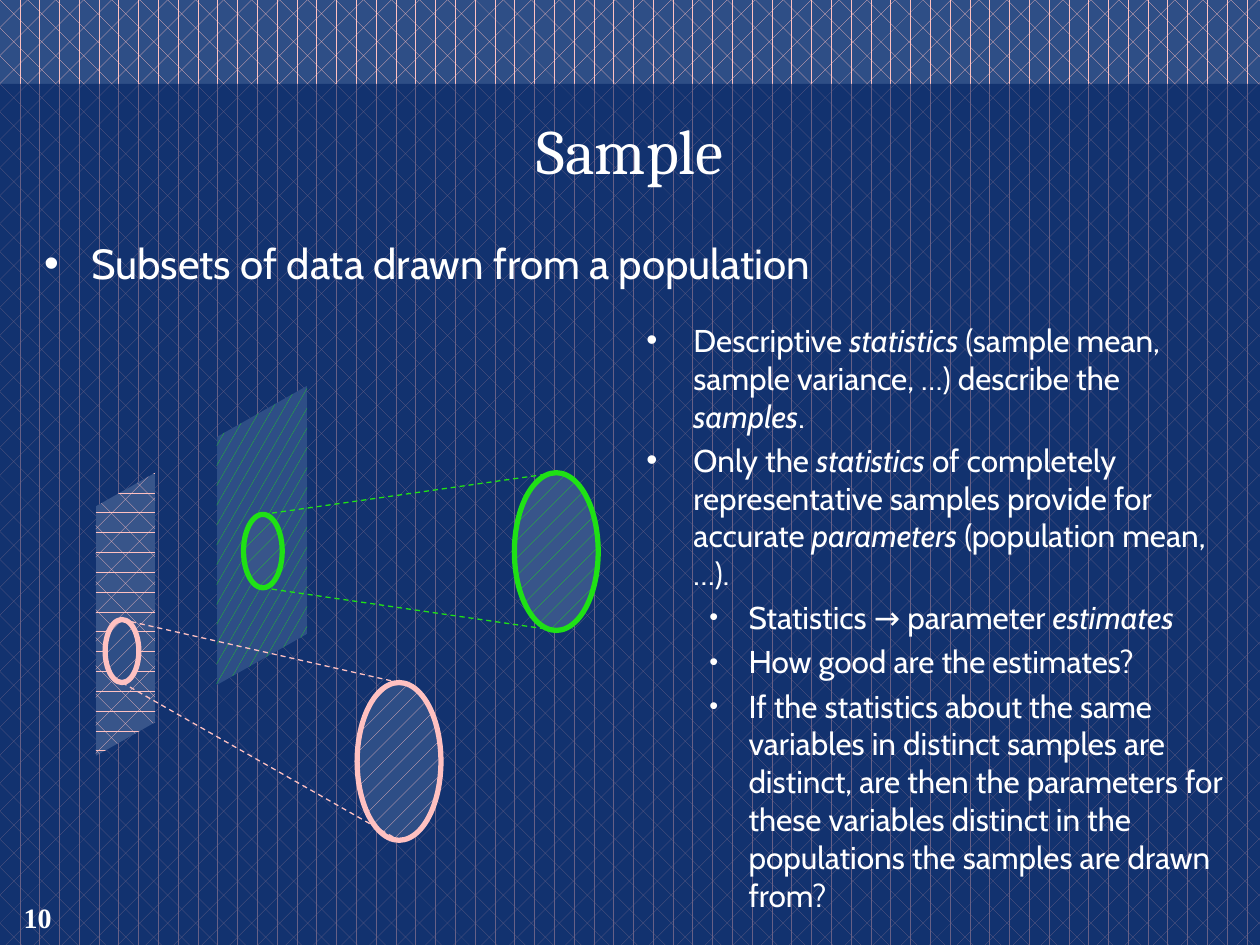
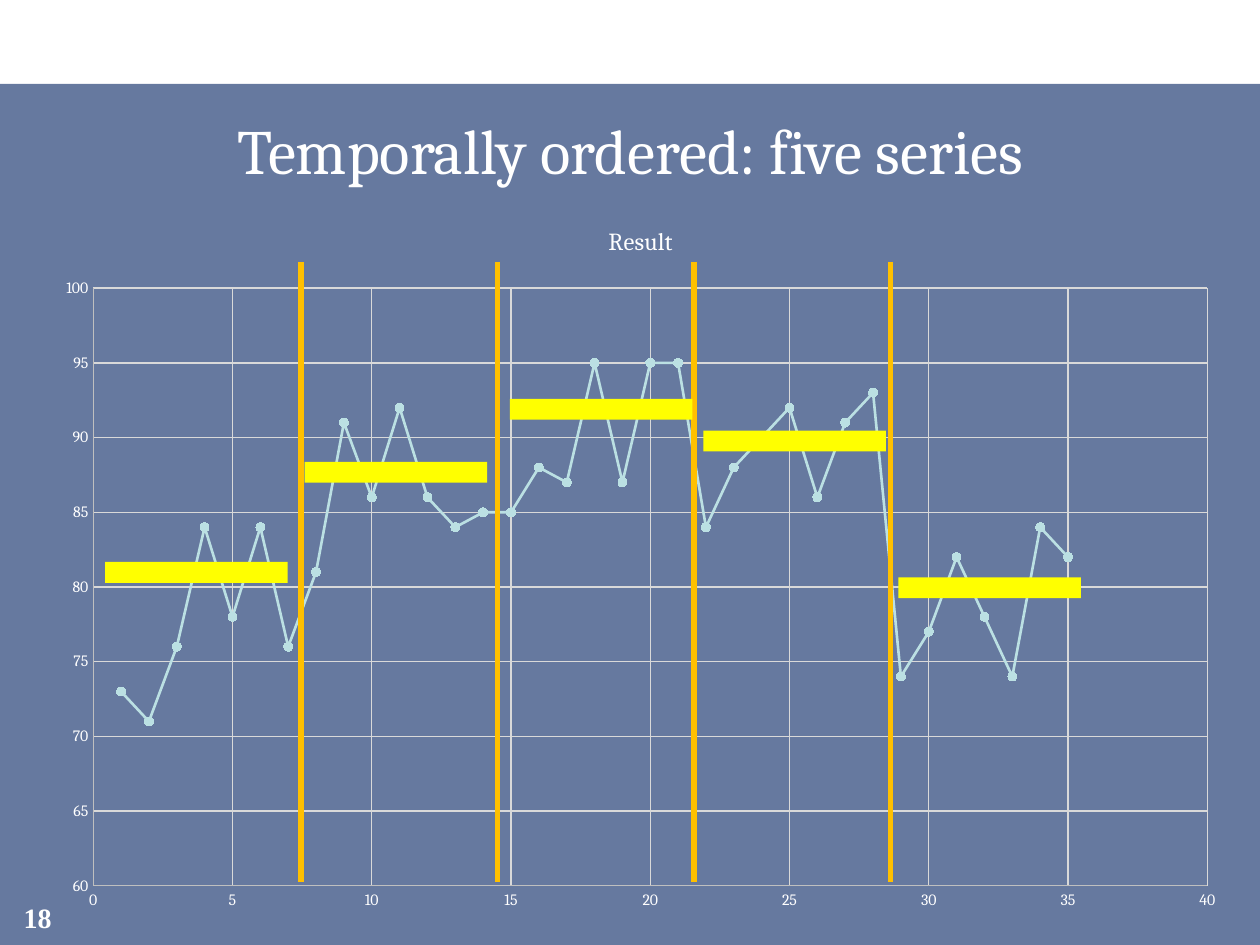
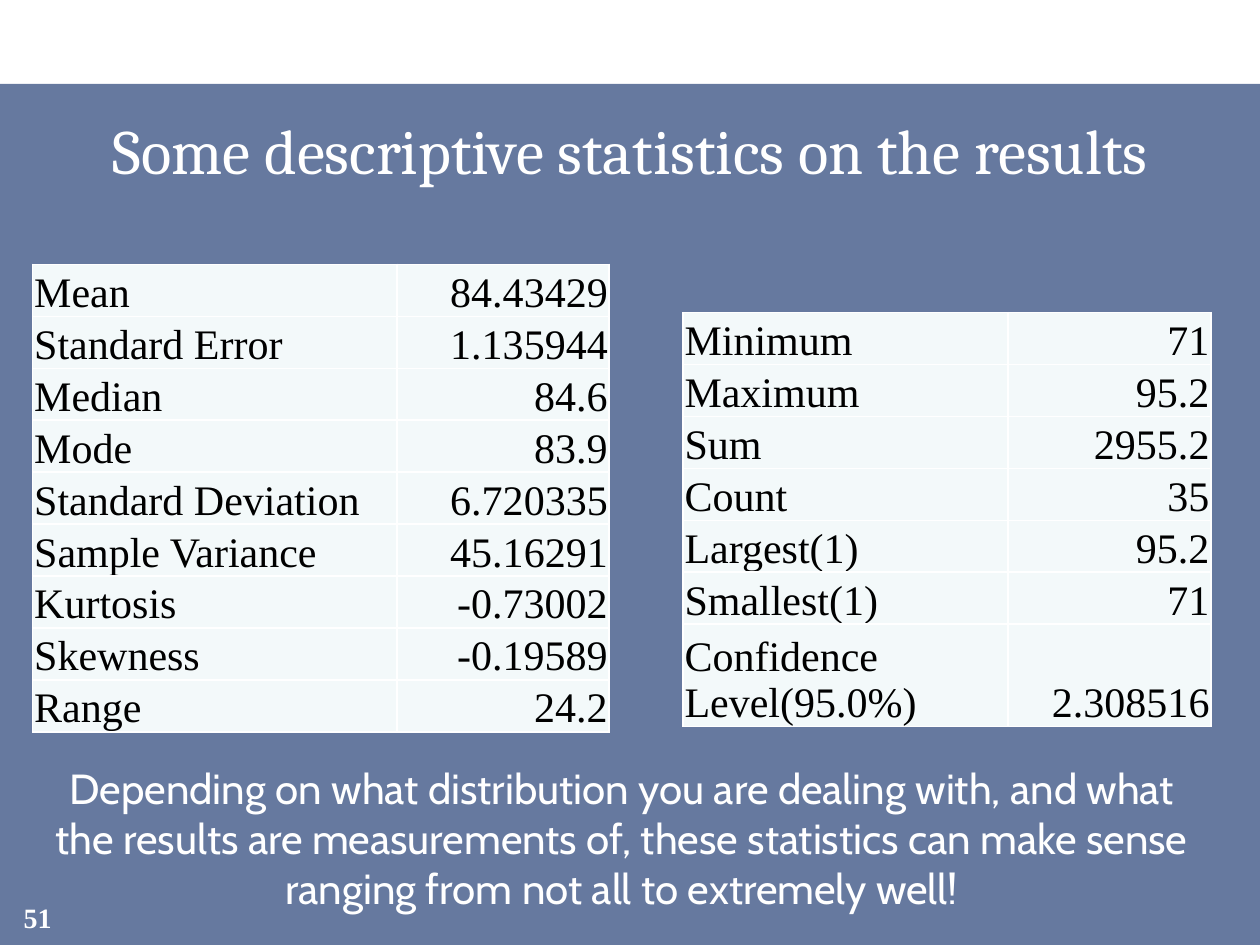
import dataclasses

import lxml.etree
import pptx
import pptx.chart.data
import pptx.dml.color
import pptx.enum.chart
import pptx.enum.dml
import pptx.enum.shapes
import pptx.enum.text
import pptx.oxml.ns
import pptx.util

Cm, Pt = pptx.util.Cm, pptx.util.Pt
RGB = pptx.dml.color.RGBColor.from_string
PATTERN = pptx.enum.dml.MSO_PATTERN
SHAPE = pptx.enum.shapes.MSO_SHAPE
ALIGN = pptx.enum.text.PP_ALIGN
ANCHOR = pptx.enum.text.MSO_ANCHOR
qn = pptx.oxml.ns.qn


@dataclasses.dataclass(frozen=True)
class Theme:
    white: str = "FFFFFF"
    black: str = "000000"
    navy: str = "002060"
    blue: str = "2E4E86"
    pale_blue: str = "38558A"
    pink: str = "FFC1C1"
    green: str = "1FE115"
    divider: str = "FFC000"
    mean_bar: str = "FFFF00"
    series: str = "BBE0E3"
    axis: str = "BFBFBF"
    grid: str = "D9D9D9"
    cell: str = "F3F9FA"
    panel_opacity: int = 60
    heading: str = "Cambria"
    body: str = "Cabin"
    figures: str = "Times New Roman"
    title_size: int = 36
    body_size: int = 24
    note_size: int = 18
    number_size: int = 16
    chart_title_size: int = 14
    axis_size: int = 9


def set_all(obj, values):
    for name, value in values.items():
        setattr(obj, name, value)


def add_xml(parent, tag, **attrs):
    return lxml.etree.SubElement(parent, qn(tag), attrs)


class Deck:
    """Holds the theme and the current slide."""

    def __init__(self, theme):
        self.t = theme
        self.prs = pptx.Presentation()
        set_all(self.prs, {"slide_width": Cm(25.4), "slide_height": Cm(19.05)})
        self.slide = None

    def font(self, font, name, size, color, **extra):
        set_all(font, {"name": name, "size": Pt(size), **extra})
        font.color.rgb = RGB(color)

    def pattern(self, fill, kind, fore, back):
        fill.patterned()
        fill.pattern = kind
        fill.fore_color.rgb, fill.back_color.rgb = RGB(fore), RGB(back)

    def new_slide(self, title, number):
        t = self.t
        self.slide = self.prs.slides.add_slide(self.prs.slide_layouts[5])
        # Translucent panel behind everything
        sp = self.shape(SHAPE.RECTANGLE, 0, 1.69, 25.4, 17.36, t.navy)
        color = sp.element.spPr.find(".//" + qn("a:srgbClr"))
        add_xml(color, "a:alpha", val=str(t.panel_opacity * 1000))
        self.slide.shapes.element.insert(2, sp.element)
        # Title and slide number
        sp = self.slide.shapes.title
        set_all(sp, {"left": Cm(0.64), "top": Cm(2.12),
                     "width": Cm(24.13), "height": Cm(2.12)})
        tf = sp.text_frame
        set_all(tf, {"vertical_anchor": ANCHOR.TOP, "word_wrap": True})
        self.paragraph(tf.paragraphs[0], title, t.title_size, t.heading, ALIGN.CENTER)
        self.text([(number, 0)], 0, 18.03, 1.52, 1.02, t.number_size,
                  t.figures, ALIGN.CENTER, bold=True)

    def paragraph(self, p, text, size, name, align=ALIGN.LEFT, color=None, bold=False):
        """Fill a paragraph; words between asterisks become italic."""
        p.alignment = align
        for i, part in enumerate(text.split("*")):
            if part:
                r = p.add_run()
                r.text = part
                self.font(r.font, name, size, color or self.t.white,
                          bold=bold, italic=i % 2 == 1)

    def bullet(self, p, level):
        margin, indent, percent = [(0.95, -0.95, 100), (2.06, -0.79, 80)][level]
        p.level = level
        pPr = p._p.get_or_add_pPr()
        pPr.set("marL", str(Cm(margin)))
        pPr.set("indent", str(Cm(indent)))
        add_xml(add_xml(pPr, "a:buClr"), "a:srgbClr", val=self.t.white)
        add_xml(pPr, "a:buSzPct", val=str(percent * 1000))
        add_xml(pPr, "a:buFont", typeface="Arial")
        add_xml(pPr, "a:buChar", char="•")

    def text(self, items, x, y, w, h, size, name=None, align=ALIGN.LEFT,
             bold=False, bullets=False):
        tf = self.slide.shapes.add_textbox(Cm(x), Cm(y), Cm(w), Cm(h)).text_frame
        tf.word_wrap = True
        for i, (words, level) in enumerate(items):
            p = tf.add_paragraph() if i else tf.paragraphs[0]
            if bullets:
                self.bullet(p, level)
            if i:
                p.space_before = Pt(size * 0.2)
            self.paragraph(p, words, size, name or self.t.body, align, bold=bold)

    def shape(self, kind, x, y, w, h, fill, line=None):
        """Add a preset shape; fill is a colour or a (pattern, fore, back)."""
        sp = self.slide.shapes.add_shape(kind, Cm(x), Cm(y), Cm(w), Cm(h))
        self.paint(sp, fill)
        if line:
            sp.line.color.rgb = RGB(line)
            sp.line.width = Pt(3)
        return sp

    def paint(self, sp, fill):
        sp.shadow.inherit = False
        sp.line.fill.background()
        if isinstance(fill, tuple):
            self.pattern(sp.fill, *fill)
        else:
            sp.fill.solid()
            sp.fill.fore_color.rgb = RGB(fill)

    def slanted_panel(self, x, y, w, h, rise, fill):
        points = [(x, y + rise), (x + w, y), (x + w, y + h - rise), (x, y + h)]
        start, *rest = [(Cm(px), Cm(py)) for px, py in points]
        builder = self.slide.shapes.build_freeform(*start, scale=1.0)
        builder.add_line_segments(rest, close=True)
        self.paint(builder.convert_to_shape(), fill)

    def line(self, x1, y1, x2, y2, color, width, dash=None):
        sp = self.slide.shapes.add_connector(
            pptx.enum.shapes.MSO_CONNECTOR.STRAIGHT, Cm(x1), Cm(y1), Cm(x2), Cm(y2))
        sp.line.color.rgb = RGB(color)
        set_all(sp.line, {"width": Pt(width), "dash_style": dash})
        add_xml(sp.element.spPr, "a:effectLst")

    def scatter(self, name, values, x, y, w, h, plot):
        """Add a scatter chart; plot is its inner area in cm from its corner."""
        t = self.t
        data = pptx.chart.data.XyChartData()
        series = data.add_series(name)
        for i, value in enumerate(values, 1):
            series.add_data_point(i, value)
        chart = self.slide.shapes.add_chart(
            pptx.enum.chart.XL_CHART_TYPE.XY_SCATTER_LINES,
            Cm(x), Cm(y), Cm(w), Cm(h), data).chart
        chart.has_legend = False
        self.font(chart.font, t.heading, t.axis_size, t.white)
        chart.has_title = True
        p = chart.chart_title.text_frame.paragraphs[0]
        self.paragraph(p, name, t.chart_title_size, t.heading, ALIGN.CENTER)
        # Axes
        none = pptx.enum.chart.XL_TICK_MARK.NONE
        for axis, low, high in [(chart.category_axis, 0, 40), (chart.value_axis, 60, 100)]:
            set_all(axis, {"minimum_scale": low, "maximum_scale": high, "major_unit": 5,
                           "major_tick_mark": none, "minor_tick_mark": none,
                           "has_major_gridlines": True})
            for fmt, color in [(axis.format, t.axis), (axis.major_gridlines.format, t.grid)]:
                fmt.line.color.rgb = RGB(color)
                fmt.line.width = Pt(0.75)
            self.font(axis.tick_labels.font, t.heading, t.axis_size, t.white)
        # Series
        chart.plots[0].vary_by_categories = False
        s = chart.plots[0].series[0]
        s.smooth = False
        s.format.line.color.rgb = RGB(t.series)
        s.format.line.width = Pt(1.5)
        set_all(s.marker, {"style": pptx.enum.chart.XL_MARKER_STYLE.CIRCLE, "size": 5})
        s.marker.format.fill.solid()
        s.marker.format.fill.fore_color.rgb = RGB(t.series)
        s.marker.format.line.color.rgb = RGB(t.series)
        # Fixed inner plot area
        area = chart.element.find(".//" + qn("c:plotArea"))
        for old in area.findall(qn("c:layout")):
            area.remove(old)
        layout = lxml.etree.Element(qn("c:layout"))
        area.insert(0, layout)
        manual = add_xml(layout, "c:manualLayout")
        add_xml(manual, "c:layoutTarget", val="inner")
        for tag in ("xMode", "yMode"):
            add_xml(manual, "c:" + tag, val="edge")
        for tag, value, whole in zip("xywh", plot, (w, h, w, h)):
            add_xml(manual, "c:" + tag, val=str(value / whole))

    def table(self, rows, x, y, widths, row_height):
        """Add a two-column table; rows grow from row_height to fit the text."""
        t = self.t
        table = self.slide.shapes.add_table(
            len(rows), len(widths), Cm(x), Cm(y), Cm(sum(widths)),
            Cm(row_height * len(rows))).table
        set_all(table, {"first_row": False, "horz_banding": False})
        for column, width in zip(table.columns, widths):
            column.width = Cm(width)
        for i, row in enumerate(rows):
            for j, words in enumerate(row):
                cell = table.cell(i, j)
                set_all(cell, {"margin_left": Cm(0.03), "margin_right": Cm(0.03),
                               "margin_top": Cm(0.03), "margin_bottom": 0,
                               "vertical_anchor": ANCHOR.BOTTOM})
                self.paragraph(cell.text_frame.paragraphs[0], words, t.body_size,
                               t.figures, ALIGN.RIGHT if j else ALIGN.LEFT, t.black)
                tcPr = cell._tc.get_or_add_tcPr()
                for side in ("lnL", "lnR", "lnT", "lnB"):
                    ln = add_xml(tcPr, "a:" + side, w=str(Pt(1)))
                    add_xml(add_xml(ln, "a:solidFill"), "a:srgbClr", val=t.white)
                cell.fill.solid()
                cell.fill.fore_color.rgb = RGB(t.cell)


def sample_slide(deck):
    t = deck.t
    deck.new_slide("Sample", "10")
    deck.pattern(deck.slide.background.fill, PATTERN.DIVOT, t.pink, t.blue)
    deck.text([("Subsets of data drawn from a population", 0)],
              0.64, 4.66, 24.13, 1.3, t.body_size, bullets=True)

    # Populations
    deck.slanted_panel(1.93, 9.53, 1.2, 5.71, 0.68, (PATTERN.DIVOT, t.pink, t.pale_blue))
    deck.slanted_panel(4.37, 7.78, 1.82, 6.03, 1.03,
                       (PATTERN.SMALL_CONFETTI, t.green, t.blue))

    # Samples: a small ellipse projected onto a large one
    samples = [
        (t.pink, t.blue, (2.12, 12.49, 0.68, 1.27), (7.2, 13.76, 1.69, 3.18)),
        (t.green, t.pale_blue, (4.91, 10.37, 0.78, 1.48), (10.37, 9.53, 1.69, 3.18)),
    ]
    for color, back, small, large in samples:
        for box in (large, small):
            deck.shape(SHAPE.OVAL, *box, (PATTERN.PERCENT_5, color, back), color)
        (x1, y1, w1, h1), (x2, y2, w2, h2) = small, large
        for end in (0, 1):
            deck.line(x1 + w1 / 2, y1 + end * h1, x2 + w2 / 2, y2 + end * h2,
                      color, 0.75, pptx.enum.dml.MSO_LINE.DASH)

    deck.text([
        ("Descriptive *statistics* (sample mean, sample variance, …) describe the "
         "*samples*.", 0),
        ("Only the *statistics* of completely representative samples provide for "
         "accurate *parameters* (population mean, …).", 0),
        ("Statistics → parameter *estimates*", 1),
        ("How good are the estimates?", 1),
        ("If the statistics about the same variables in distinct samples are distinct, "
         "are then the parameters for these variables distinct in the populations the "
         "samples are drawn from?", 1),
    ], 12.78, 6.35, 12.4, 12.5, t.note_size, bullets=True)


def series_slide(deck):
    t = deck.t
    deck.new_slide("Temporally ordered: five series", "18")
    results = [73, 71, 76, 84, 78, 84, 76,
               81, 91, 86, 92, 86, 84, 85,
               85, 88, 87, 95, 87, 95, 95,
               84, 88, 90, 92, 86, 91, 93,
               74, 77, 82, 78, 74, 84, 82]
    deck.scatter("Result", results, 0.85, 4.02, 24.13, 14.6, (1.03, 1.79, 22.46, 12.05))
    # Dividers between the series
    for i in range(4):
        x = 6.07 + 3.96 * i
        deck.line(x, 5.29, x, 17.78, t.divider, 3)
    # Mean of each series
    for x, y in [(2.12, 11.33), (6.14, 9.31), (10.28, 8.04), (14.18, 8.68), (18.11, 11.64)]:
        deck.shape(SHAPE.RECTANGLE, x, y, 3.68, 0.42, t.mean_bar)


def statistics_slide(deck):
    deck.new_slide("Some descriptive statistics on the results", "51")
    deck.table([
        ("Mean", "84.43429"), ("Standard Error", "1.135944"), ("Median", "84.6"),
        ("Mode", "83.9"), ("Standard Deviation", "6.720335"),
        ("Sample Variance", "45.16291"), ("Kurtosis", "-0.73002"),
        ("Skewness", "-0.19589"), ("Range", "24.2"),
    ], 0.66, 5.33, (7.34, 4.28), 0.53)
    deck.table([
        ("Minimum", "71"), ("Maximum", "95.2"), ("Sum", "2955.2"), ("Count", "35"),
        ("Largest(1)", "95.2"), ("Smallest(1)", "71"),
        ("Confidence Level(95.0%)", "2.308516"),
    ], 13.77, 6.3, (6.55, 4.09), 0.53)
    deck.text([("Depending on what distribution you are dealing with, and what the results "
                "are measurements of, these statistics can make sense ranging from not all "
                "to extremely well!", 0)],
              0.66, 15.24, 23.75, 3.3, deck.t.body_size, align=ALIGN.CENTER)


def main():
    deck = Deck(Theme())
    sample_slide(deck)
    series_slide(deck)
    statistics_slide(deck)
    deck.prs.save("out.pptx")


if __name__ == "__main__":
    main()
